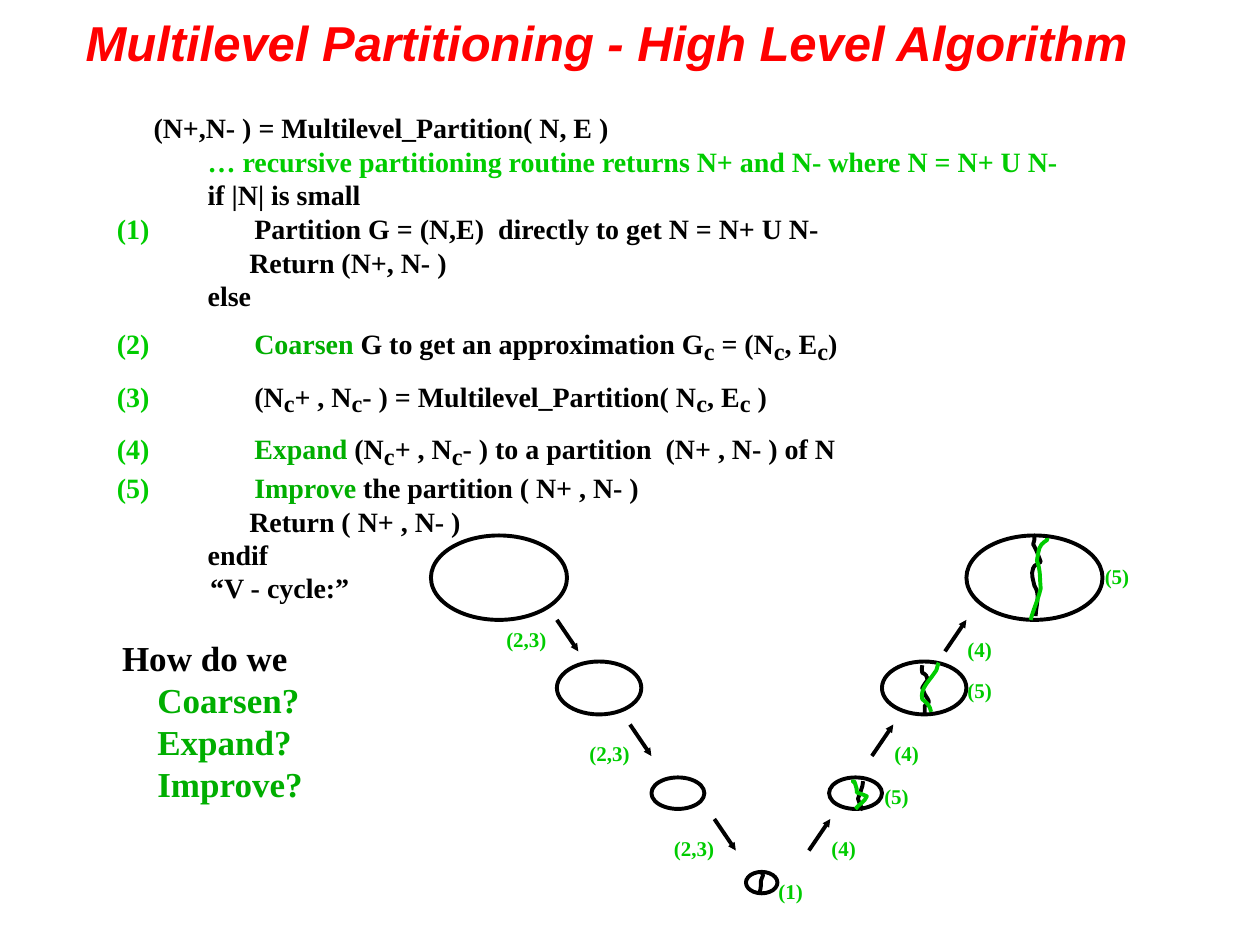
from lxml import etree
from pptx import Presentation
from pptx.dml.color import RGBColor
from pptx.enum.shapes import MSO_CONNECTOR, MSO_SHAPE
from pptx.enum.text import MSO_ANCHOR, MSO_AUTO_SIZE, PP_ALIGN
from pptx.oxml.ns import qn
from pptx.util import Inches, Pt

ELLIPSE = MSO_SHAPE.OVAL
STRAIGHT = MSO_CONNECTOR.STRAIGHT
MIDDLE = MSO_ANCHOR.MIDDLE
LEFT = PP_ALIGN.LEFT
GROW = MSO_AUTO_SIZE.SHAPE_TO_FIT_TEXT
SERIF = "Times New Roman"
BLACK, RED, GREEN, DARK_GREEN = "000000", "FF0000", "00CC00", "00AE00"
TITLE_ONLY = 5
STEP_TAB = 1.09

# Each line: indent in inches, then (text, colour) parts; "_c" is a subscript c.
ALGORITHM = [
    (0.29, [("(N+,N- ) = Multilevel_Partition( N, E )", BLACK)]),
    (0.72, [("… recursive partitioning routine returns N+ and N- where N = N+ U N-", GREEN)]),
    (0.72, [("if |N| is small", BLACK)]),
    (0, [("(1)\t", GREEN), ("Partition G = (N,E)  directly to get N = N+ U N-", BLACK)]),
    (1.05, [("Return (N+, N- )", BLACK)]),
    (0.72, [("else", BLACK)]),
    (0, [("(2)\t", GREEN), ("Coarsen ", DARK_GREEN),
         ("G to get an approximation G_c = (N_c, E_c)", BLACK)]),
    (0, [("(3)\t", GREEN), ("(N_c+ , N_c- ) = Multilevel_Partition( N_c, E_c )", BLACK)]),
    (0, [("(4)\t", GREEN), ("Expand", DARK_GREEN),
         (" (N_c+ , N_c- ) to a partition  (N+ , N- ) of N", BLACK)]),
    (0, [("(5)\t", GREEN), ("Improve", DARK_GREEN), (" the partition ( N+ , N- )", BLACK)]),
    (1.05, [("Return ( N+ , N- )", BLACK)]),
    (0.72, [("endif", BLACK)]),
]
QUESTIONS = [(0, [("How do we", BLACK)])] + [
    (0.28, [(step, DARK_GREEN)]) for step in ("Coarsen?", "Expand?", "Improve?")]

# Graphs of the V-cycle: left, top, width, height and partition curves.
# A curve is a start point followed by cubic Bezier triples, from the graph's corner.
GRAPHS = [
    (0, 0, 1.08, 0.67, []),
    (1, 1, 0.67, 0.42, []),
    (1.75, 1.92, 0.42, 0.25, []),
    (2.5, 2.67, 0.25, 0.17, [
        (BLACK, [(.11, .16), (.12, .13), (.12, .10), (.12, .07),
                 (.13, .03), (.15, .03), (.12, 0)])]),
    (3.16, 1.92, 0.42, 0.25, [
        (BLACK, [(.27, .26), (.25, .23), (.24, .20), (.23, .17),
                 (.24, .13), (.27, .08), (.27, .03)]),
        (GREEN, [(.21, .25), (.24, .21), (.28, .20), (.30, .15),
                 (.28, .14), (.22, .12), (.22, .12), (.22, .10), (.22, .08), (.21, .06),
                 (.19, -.01), (.19, .07), (.19, .02)])]),
    (3.58, 1, 0.67, 0.42, [
        (BLACK, [(.34, .43), (.34, .40), (.34, .38), (.34, .35),
                 (.35, .34), (.37, .34), (.37, .33), (.38, .31), (.35, .28), (.34, .26),
                 (.34, .24), (.32, .23), (.32, .21), (.33, .19), (.36, .15), (.36, .15),
                 (.36, .14), (.36, .12), (.35, .11), (.35, .10), (.33, .10), (.32, .09),
                 (.31, .07), (.32, .05), (.32, .03)]),
        (GREEN, [(.39, .40), (.38, .35), (.36, .33), (.32, .30),
                 (.30, .22), (.37, .16), (.41, .10), (.43, .07), (.43, .08), (.44, .04),
                 (.44, .03), (.45, .01), (.45, .01)])]),
    (4.25, 0, 1.08, 0.67, [
        (BLACK, [(.55, .64), (.55, .56), (.59, .47), (.54, .40),
                 (.53, .35), (.51, .31), (.53, .26), (.54, .23), (.57, .23), (.59, .21),
                 (.57, .16), (.56, .12), (.53, .07), (.54, .03), (.54, .05), (.54, .01)]),
        (GREEN, [(.51, .67), (.53, .59), (.57, .51), (.59, .42),
                 (.58, .31), (.59, .28), (.56, .20), (.56, .20), (.57, .13), (.58, .10),
                 (.59, .08), (.60, .06), (.62, .05), (.65, .03), (.64, .04), (.64, .02)])]),
]
ARROW_WIDTH, ARROW_HEIGHT = 0.17, 0.25
DOWN_ARROWS = [(1, 0.67), (1.58, 1.5), (2.25, 2.25)]
UP_ARROWS = [(3, 2.5), (3.5, 1.75), (4.08, 0.92)]
STEP_LABELS = {
    "(2,3)": [(0.5, 0.67), (1.16, 1.58), (1.83, 2.33)],
    "(1)": [(2.66, 2.67)],
    "(4)": [(3.08, 2.33), (3.58, 1.58), (4.16, 0.75)],
    "(5)": [(3.5, 1.92), (4.16, 1.08), (5.25, 0.17)],
}


def rgb(hex_colour):
    return RGBColor.from_string(hex_colour)


def add_text(paragraph, text, size=16, colour=BLACK, font=SERIF, italic=False, baseline=None):
    run = paragraph.add_run()
    run.text = text
    run.font.size = Pt(size)
    run.font.name = font
    run.font.bold = True
    run.font.italic = italic
    run.font.color.rgb = rgb(colour)
    if baseline is not None:
        run.font._element.set("baseline", str(baseline))


def add_lines(slide, box, lines, size=16, wrap=False):
    """Place a text box whose lines are (indent, coloured parts)."""
    frame = slide.shapes.add_textbox(*map(Inches, box)).text_frame
    frame.word_wrap = wrap
    frame.auto_size = GROW
    for index, (indent, parts) in enumerate(lines):
        paragraph = frame.paragraphs[0] if index == 0 else frame.add_paragraph()
        properties = paragraph._p.get_or_add_pPr()
        if indent:
            properties.set("marL", str(Inches(indent)))
        if "\t" in parts[0][0]:
            tabs = etree.SubElement(properties, qn("a:tabLst"))
            etree.SubElement(tabs, qn("a:tab"), pos=str(Inches(STEP_TAB)), algn="l")
        for text, colour in parts:
            for piece_index, piece in enumerate(text.split("_c")):
                if piece_index:
                    add_text(paragraph, "c", size=24, colour=colour, baseline=-14000)
                if piece:
                    add_text(paragraph, piece, size=size, colour=colour)


def add_title(slide, box):
    title = slide.shapes.title
    title.left, title.top, title.width, title.height = map(Inches, box)
    frame = title.text_frame
    frame.vertical_anchor = MIDDLE
    frame.paragraphs[0].alignment = LEFT
    add_text(frame.paragraphs[0], "Multilevel Partitioning - High Level Algorithm",
             size=28, colour=RED, font="Arial", italic=True)


def outline(shape, colour=BLACK):
    shape.fill.background()
    shape.shadow.inherit = False
    shape.line.color.rgb = rgb(colour)
    shape.line.width = Pt(2.25)


def add_curve(slide, left, top, points, colour):
    """Draw a freeform, then join each three of its line segments into one Bezier."""
    places = [(Inches(left + x), Inches(top + y)) for x, y in points]
    builder = slide.shapes.build_freeform(*places[0])
    builder.add_line_segments(places[1:], close=False)
    curve = builder.convert_to_shape()
    segments = list(curve._element.iter(qn("a:lnTo")))
    for first in range(0, len(segments), 3):
        bezier = etree.Element(qn("a:cubicBezTo"))
        segments[first].addprevious(bezier)
        for segment in segments[first:first + 3]:
            bezier.append(segment[0])
            segment.getparent().remove(segment)
    outline(curve, colour)


def add_arrow(slide, x, y, rise):
    arrow = slide.shapes.add_connector(
        STRAIGHT, Inches(x), Inches(y), Inches(x + ARROW_WIDTH), Inches(y + rise))
    arrow.line.color.rgb = rgb(BLACK)
    arrow.line.width = Pt(2.25)
    etree.SubElement(arrow.line._get_or_add_ln(), qn("a:tailEnd"),
                     type="triangle", w="sm", len="sm")
    etree.SubElement(arrow._element.spPr, qn("a:effectLst"))


def add_v_cycle(slide, left, top):
    for x, y, width, height, curves in GRAPHS:
        box = map(Inches, (left + x, top + y, width, height))
        outline(slide.shapes.add_shape(ELLIPSE, *box))
        for colour, points in curves:
            add_curve(slide, left + x, top + y, points, colour)
    for starts, rise in ((DOWN_ARROWS, ARROW_HEIGHT), (UP_ARROWS, -ARROW_HEIGHT)):
        for x, y in starts:
            add_arrow(slide, left + x, top + y, rise)
    for label, places in STEP_LABELS.items():
        width = 0.54 if "," in label else 0.4
        for x, y in places:
            add_lines(slide, (left + x, top + y, width, 0.3), [(0, [(label, GREEN)])], size=12)


def main():
    presentation = Presentation()
    presentation.slide_width, presentation.slide_height = Inches(10), Inches(7.5)
    slide = presentation.slides.add_slide(presentation.slide_layouts[TITLE_ONLY])
    add_title(slide, (0.58, 0, 8.92, 0.67))
    add_lines(slide, (0.83, 0.83, 8.31, 3.31), ALGORITHM, wrap=True)
    add_v_cycle(slide, 3.42, 4.25)
    add_lines(slide, (0.87, 5, 1.79, 1.43), QUESTIONS, size=20)
    add_lines(slide, (1.57, 4.48, 1.4, 0.37), [(0, [("“V - cycle:”", BLACK)])])
    presentation.save("out.pptx")


if __name__ == "__main__":
    main()
